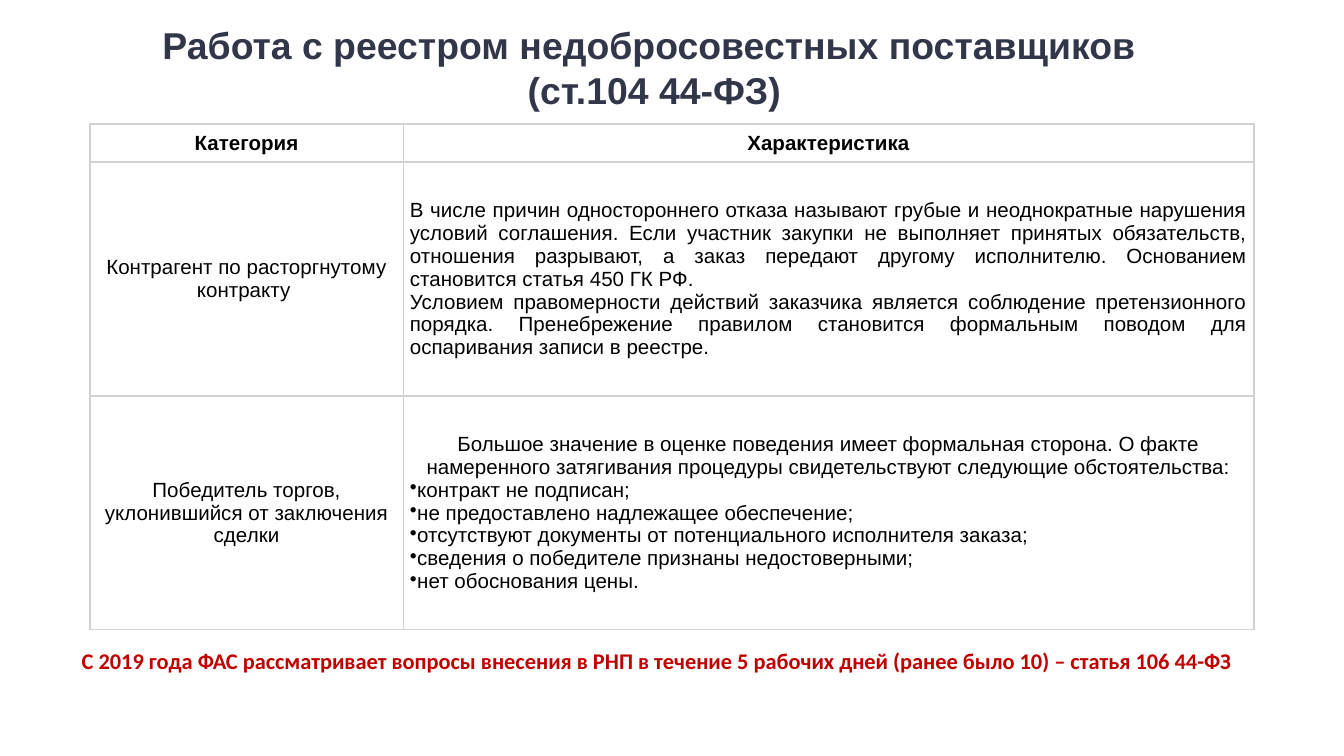
from lxml import etree
from pptx import Presentation
from pptx.dml.color import RGBColor
from pptx.enum.text import MSO_ANCHOR, PP_ALIGN
from pptx.oxml.ns import qn
from pptx.util import Pt

LEFT, MID, JUST = PP_ALIGN.LEFT, PP_ALIGN.CENTER, PP_ALIGN.JUSTIFY
CENTER = MSO_ANCHOR.MIDDLE
HUES = {"title": "323649", "text": "000000", "note": "C00000",
        "line": "D1D2D4", "fill": "FFFFFF"}


def write(frame, text, size=11, face="Arial", hue="text", bold=False,
          align=LEFT, bullet=False, more=False):
    par = frame.add_paragraph() if more else frame.paragraphs[0]
    par.text = text
    par.alignment = align
    if bullet:
        props = par._p.get_or_add_pPr()
        props.set("marL", "0")
        props.set("indent", "0")
        etree.SubElement(props, qn("a:buChar"), char="•")
    for run in par.runs:
        font = run.font
        font.size, font.name, font.bold = Pt(size), face, bold
        font.color.rgb = RGBColor.from_string(HUES[hue])


def edge(cell):
    props = cell._tc.get_or_add_tcPr()
    for side in ("lnL", "lnR", "lnT", "lnB"):
        line = etree.SubElement(props, qn("a:" + side), w=str(Pt(0.75)))
        fill = etree.SubElement(line, qn("a:solidFill"))
        etree.SubElement(fill, qn("a:srgbClr"), val=HUES["line"])


deck = Presentation()
deck.slide_width, deck.slide_height = Pt(720), Pt(405)
slide = deck.slides.add_slide(deck.slide_layouts[6])

# Title
box = slide.shapes.add_textbox(Pt(23.8), Pt(13.7), Pt(648), Pt(44.6))
frame = box.text_frame
frame.word_wrap = True
frame.vertical_anchor = CENTER
write(frame, "Работа с реестром недобросовестных поставщиков\v (ст.104 44-ФЗ)",
      size=20, hue="title", bold=True, align=MID)

# Table text: each cell is a list of (text, format) paragraphs
head = {"bold": True, "align": MID}
mid, just, item = {"align": MID}, {"align": JUST}, {"bullet": True}
rows = [
    [[("Категория", head)], [("Характеристика", head)]],
    [[("Контрагент по расторгнутому контракту ", mid)],
     [("В числе причин одностороннего отказа называют грубые и неоднократные "
       "нарушения условий соглашения. Если участник закупки не выполняет "
       "принятых обязательств, отношения разрывают, а заказ передают другому "
       "исполнителю. Основанием становится статья 450 ГК РФ.", just),
      ("Условием правомерности действий заказчика является соблюдение "
       "претензионного порядка. Пренебрежение правилом становится формальным "
       "поводом для оспаривания записи в реестре.", just)]],
    [[("Победитель торгов, уклонившийся от заключения сделки", mid)],
     [("Большое значение в оценке поведения имеет формальная сторона. О факте "
       "намеренного затягивания процедуры свидетельствуют следующие "
       "обстоятельства:", mid),
      ("контракт не подписан;", item),
      ("не предоставлено надлежащее обеспечение;", item),
      ("отсутствуют документы от потенциального исполнителя заказа;", item),
      ("сведения о победителе признаны недостоверными;", item),
      ("нет обоснования цены.", item)]],
]

# Table
wide, high = (167.8, 455.8), (20, 125.3, 125.3)
grid = slide.shapes.add_table(len(high), len(wide), Pt(48.2), Pt(66.4),
                              Pt(sum(wide)), Pt(sum(high))).table
for col, width in zip(grid.columns, wide):
    col.width = Pt(width)
for r, row in enumerate(rows):
    grid.rows[r].height = Pt(high[r])
    for c, paras in enumerate(row):
        cell = grid.cell(r, c)
        cell.margin_left = cell.margin_right = Pt(3.6)
        cell.margin_top = cell.margin_bottom = Pt(3.6)
        cell.vertical_anchor = CENTER
        edge(cell)
        cell.fill.solid()
        cell.fill.fore_color.rgb = RGBColor.from_string(HUES["fill"])
        for i, (text, style) in enumerate(paras):
            write(cell.text_frame, text, more=i > 0, **style)

# Note below the table
box = slide.shapes.add_textbox(Pt(36.7), Pt(342.9), Pt(652.3), Pt(21.8))
box.text_frame.word_wrap = True
write(box.text_frame,
      "С 2019 года ФАС рассматривает вопросы внесения в РНП в течение "
      "5 рабочих дней (ранее было 10) – статья 106 44-ФЗ",
      size=12, face="Calibri", hue="note", bold=True)

deck.save("out.pptx")
